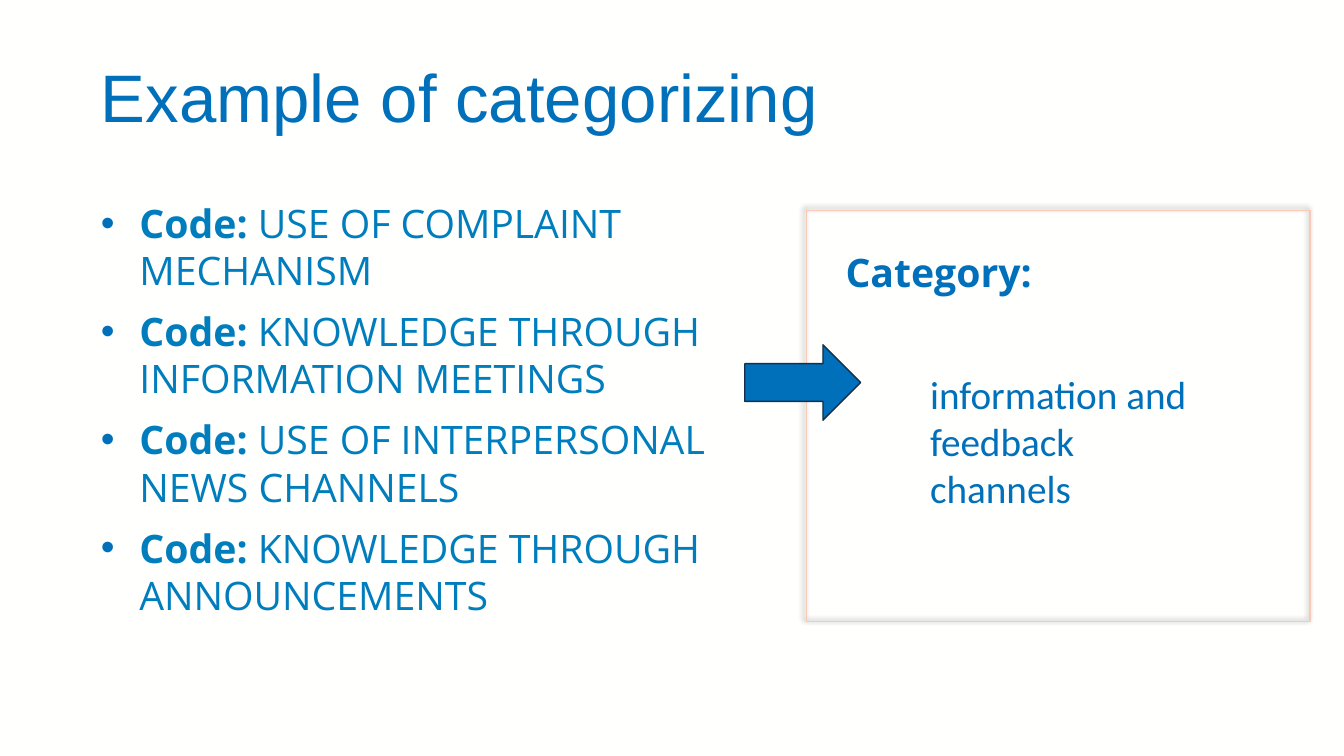
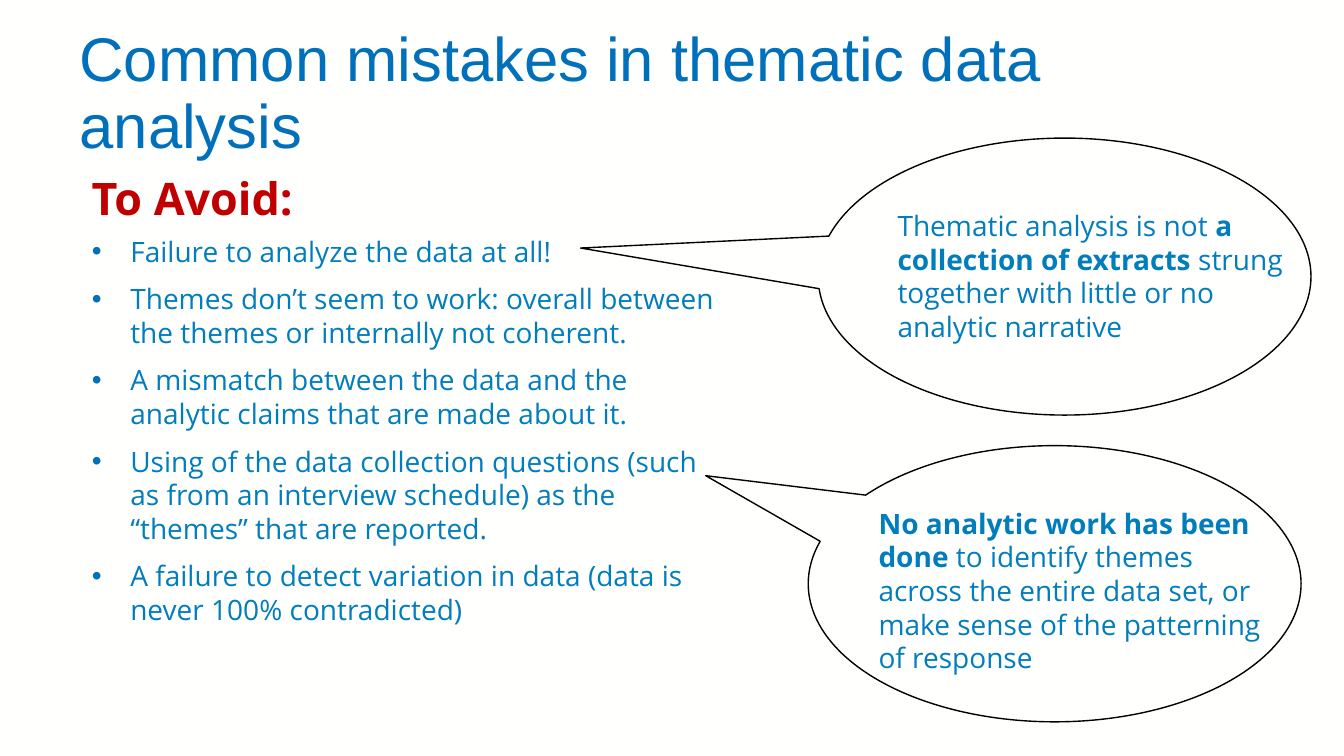
from dataclasses import dataclass
from lxml.etree import SubElement
from pptx import Presentation
from pptx.dml.color import RGBColor
from pptx.enum.shapes import MSO_SHAPE
from pptx.enum.text import MSO_ANCHOR, MSO_AUTO_SIZE, PP_ALIGN
from pptx.oxml.ns import qn
from pptx.util import Cm, Pt


@dataclass(frozen=True)
class Theme:
    paper: str = "FFFFFE"
    blue: str = "0070BA"
    text: str = "007DBC"
    red: str = "C00000"
    peach: str = "FAC9B5"
    navy: str = "133048"
    black: str = "000000"
    head: str = "Arial"
    body: str = "Open Sans"
    plain: str = "Calibri"
    large: int = 28
    small: int = 20
    label: int = 32
    gap: int = 10
    hang: float = 0.97
    inset: float = 1.27


THEME = Theme()


def color(code):
    return RGBColor.from_string(code)


def place(shape, box):
    shape.left, shape.top, shape.width, shape.height = map(Cm, box)


def shift(box, part):
    return box[0] + part[0], box[1] + part[1], part[2], part[3]


def style(para, face, size, ink, bold=None):
    font = para.font
    font.name, font.size, font.bold = face, Pt(size), bold
    font.color.rgb = color(ink)


def add_runs(para, runs):
    for text, bold in runs:
        run = para.add_run()
        run.text = text
        if bold:
            run.font.bold = True


def add_bullet(para):
    props = para._p.get_or_add_pPr()
    props.set("marL", str(Cm(THEME.hang)))
    props.set("indent", str(-Cm(THEME.hang)))
    tint = SubElement(props, qn("a:buClr"))
    SubElement(tint, qn("a:srgbClr"), val=THEME.blue)
    SubElement(props, qn("a:buFont"), typeface="Arial")
    SubElement(props, qn("a:buChar"), char="•")


def add_title(slide, box, text, size):
    title = slide.shapes.title
    place(title, box)
    frame = title.text_frame
    frame.text = text
    frame.word_wrap = True
    frame.auto_size = MSO_AUTO_SIZE.NONE
    frame.vertical_anchor = MSO_ANCHOR.MIDDLE
    para = frame.paragraphs[0]
    para.alignment = PP_ALIGN.LEFT
    para.line_spacing = 0.9
    style(para, THEME.head, size, THEME.blue)


def add_list(slide, box, items, size):
    body = slide.placeholders[1]
    place(body, box)
    frame = body.text_frame
    frame.word_wrap = True
    frame.auto_size = MSO_AUTO_SIZE.NONE
    for index, runs in enumerate(items):
        para = frame.add_paragraph() if index else frame.paragraphs[0]
        add_bullet(para)
        para.space_before = Pt(THEME.gap if index else 0)
        style(para, THEME.body, size, THEME.text)
        add_runs(para, runs)


def add_text(shapes, box, runs, face, size, ink, bold=None):
    frame = shapes.add_textbox(*map(Cm, box)).text_frame
    frame.word_wrap = True
    para = frame.paragraphs[0]
    style(para, face, size, ink, bold)
    add_runs(para, runs)
    return para


def add_form(shapes, kind, box, line, fill=None):
    form = shapes.add_shape(kind, *map(Cm, box))
    form.shadow.inherit = False
    form.line.color.rgb = color(line)
    form.line.width = Pt(1)
    if fill:
        form.fill.solid()
        form.fill.fore_color.rgb = color(fill)
    else:
        form.fill.background()
    return form


def add_shadow(form):
    effects = form._element.spPr.find(qn("a:effectLst"))
    shade = SubElement(effects, qn("a:outerShdw"), blurRad=str(Pt(4)),
                       dist=str(Pt(3)), dir=str(225 * 60000),
                       algn="br", rotWithShape="0")
    tint = SubElement(shade, qn("a:srgbClr"), val=THEME.black)
    SubElement(tint, qn("a:alpha"), val="40000")


def add_panel(slide, box, label, text):
    shapes = slide.shapes
    add_text(shapes, shift(box, (2.87, 3.89, 7.21, 3.84)), [(text, False)],
             THEME.plain, THEME.large, THEME.blue)
    add_shadow(add_form(shapes, MSO_SHAPE.RECTANGLE, box, THEME.peach))
    add_text(shapes, shift(box, (0.74, 0.81, 9.58, 1.8)), [(label, False)],
             THEME.body, THEME.large, THEME.blue, True)
    add_form(shapes, MSO_SHAPE.RIGHT_ARROW, shift(box, (-1.55, 3.38, 2.92, 1.9)),
             THEME.navy, THEME.blue)


def add_callout(slide, box, tip, part, runs):
    shapes = slide.shapes.add_group_shape().shapes
    bubble = add_form(shapes, MSO_SHAPE.OVAL_CALLOUT, box,
                      THEME.black, THEME.paper)
    bubble.adjustments[0], bubble.adjustments[1] = tip
    para = add_text(shapes, shift(box, part), runs,
                    THEME.body, THEME.small, THEME.text)
    para._p.get_or_add_pPr().set("marL", str(Cm(THEME.inset)))


def build_example(slide):
    add_title(slide, (2.29, 0.94, 29.29, 3.2), "Example of categorizing", 48)
    codes = ["USE OF COMPLAINT MECHANISM",
             "KNOWLEDGE THROUGH INFORMATION MEETINGS",
             "USE OF INTERPERSONAL NEWS CHANNELS",
             "KNOWLEDGE THROUGH ANNOUNCEMENTS"]
    add_list(slide, (2.29, 4.9, 16.71, 10.77),
             [[("Code: ", True), (code, False)] for code in codes], THEME.large)
    add_panel(slide, (20.32, 5.31, 12.7, 10.36), "Category:",
              "information and feedback channels")


def build_errors(slide):
    add_title(slide, (1.75, 0.79, 29.29, 3.2),
              "Common mistakes in thematic data analysis", 44)
    box = (2.06, 5.77, 16.23, 11.38)
    items = [
        "Failure to analyze the data at all!",
        "Themes don’t seem to work: overall between the themes or internally "
        "not coherent.",
        "A mismatch between the data and the analytic claims that are made "
        "about it.",
        "Using of the data collection questions (such as from an interview "
        "schedule) as the “themes” that are reported.",
        "A failure to detect variation in data (data is never 100% "
        "contradicted)"]
    add_list(slide, box, [[(item, False)] for item in items], THEME.small)
    add_text(slide.shapes, shift(box, (0, -1.6, 5.97, 1.42)),
             [("To Avoid:", False)], THEME.body, THEME.label, THEME.red, True)
    add_callout(slide, (20.62, 3.48, 12.42, 6.98), (-0.982, -0.103),
                (0.48, 1.65, 11.91, 3.68),
                [("Thematic analysis is not ", False),
                 ("a collection of extracts ", True),
                 ("strung together with little or no analytic narrative", False)])
    add_callout(slide, (20.37, 11.23, 12.42, 6.96), (-0.708, -0.391),
                (0.25, 1.4, 11.91, 4.52),
                [("No analytic work has been done ", True),
                 ("to identify themes across the entire data set, or make "
                  "sense of the patterning of response", False)])


def main():
    deck = Presentation()
    deck.slide_width, deck.slide_height = Cm(33.87), Cm(19.05)
    fill = deck.slide_master.background.fill
    fill.solid()
    fill.fore_color.rgb = color(THEME.paper)
    for build in (build_example, build_errors):
        build(deck.slides.add_slide(deck.slide_layouts[1]))
    deck.save("out.pptx")


if __name__ == "__main__":
    main()
